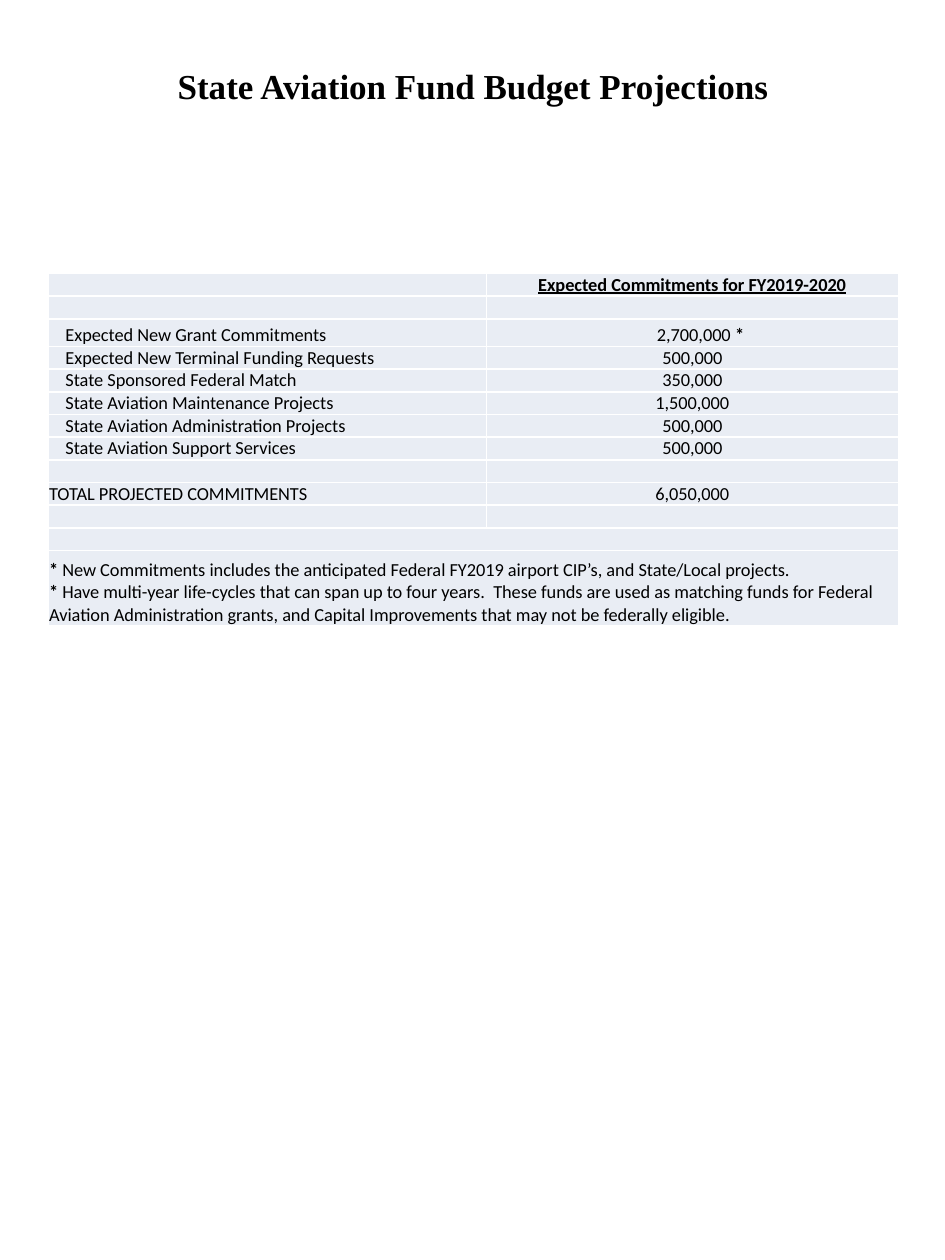
from dataclasses import dataclass

from lxml import etree
from pptx import Presentation
from pptx.dml.color import RGBColor
from pptx.enum import text
from pptx.oxml import ns
from pptx.util import Inches, Pt


@dataclass(frozen=True)
class Theme:
    ink: RGBColor = RGBColor(0x00, 0x00, 0x00)
    cell_fill: RGBColor = RGBColor(0xE9, 0xED, 0xF4)
    border: str = "FFFFFF"
    border_width: int = Pt(1)
    title_font: str = "Times New Roman"
    body_font: str = "Calibri"
    title_size: int = Pt(20)
    body_size: int = Pt(10.5)


THEME = Theme()
TITLE = "State Aviation Fund Budget Projections"
HEADING = "Expected Commitments for FY2019-2020"
COMMITMENTS = [
    ("Expected New Grant Commitments", "2,700,000 *"),
    ("Expected New Terminal Funding Requests", "500,000"),
    ("State Sponsored Federal Match", "350,000"),
    ("State Aviation Maintenance Projects", "1,500,000"),
    ("State Aviation Administration Projects", "500,000"),
    ("State Aviation Support Services", "500,000"),
]
TOTAL = ("TOTAL PROJECTED COMMITMENTS", "6,050,000")
NOTES = [
    "* New Commitments includes the anticipated Federal FY2019 airport CIP’s, "
    "and State/Local projects.",
    "* Have multi-year life-cycles that can span up to four years.  These funds "
    "are used as matching funds for Federal Aviation Administration grants, and "
    "Capital Improvements that may not be federally eligible.",
]
BLANK = ("", "")
ROWS = [("", HEADING), BLANK, *COMMITMENTS, BLANK, TOTAL, BLANK, BLANK,
        ("\n".join(NOTES), "")]
FIRST_ITEM = 2
ITEM_ROWS = range(FIRST_ITEM, FIRST_ITEM + len(COMMITMENTS))
MERGED_ROWS = (len(ROWS) - 2, len(ROWS) - 1)
ROW_HEIGHT = Inches(0.18)
TALL_ROWS = {FIRST_ITEM: Inches(0.22), len(ROWS) - 1: Inches(0.6)}
LABEL_WIDTH = Inches(3.48)
INDENT = Inches(0.13)


def style_font(font, name, size, bold=False):
    font.name, font.size, font.bold = name, size, bold
    font.color.rgb = THEME.ink


def add_title(slide, left, top, width, height):
    title = slide.shapes.title
    title.left, title.top, title.width, title.height = left, top, width, height
    frame = title.text_frame
    frame.text = TITLE
    frame.word_wrap = True
    frame.vertical_anchor = text.MSO_ANCHOR.MIDDLE
    frame.margin_bottom = Inches(0.36)  # raises the line above the box centre
    paragraph = frame.paragraphs[0]
    paragraph.alignment = text.PP_ALIGN.CENTER
    style_font(paragraph.runs[0].font, THEME.title_font, THEME.title_size, True)


def set_borders(cell):
    properties = cell._tc.get_or_add_tcPr()
    for index, side in enumerate(("lnL", "lnR", "lnT", "lnB")):
        line = etree.Element(ns.qn(f"a:{side}"), w=str(THEME.border_width))
        fill = etree.SubElement(line, ns.qn("a:solidFill"))
        etree.SubElement(fill, ns.qn("a:srgbClr"), val=THEME.border)
        properties.insert(index, line)


def write_paragraph(paragraph, content):
    """Write the content, with every asterisk in bold."""
    before, star, after = content.partition("*")
    for piece in filter(None, (before, star, after)):
        run = paragraph.add_run()
        run.text = piece
        style_font(run.font, THEME.body_font, THEME.body_size, piece == "*")
    # Keeps blank rows as low as the written ones
    end = paragraph._p.get_or_add_endParaRPr()
    end.set("sz", str(int(THEME.body_size.pt * 100)))


def fill_cell(cell, content, centred, indented):
    cell.fill.solid()
    cell.fill.fore_color.rgb = THEME.cell_fill
    set_borders(cell)
    cell.margin_left = cell.margin_right = Inches(0.01)
    cell.margin_top = cell.margin_bottom = 0
    cell.vertical_anchor = text.MSO_ANCHOR.BOTTOM
    frame = cell.text_frame
    for index, line in enumerate(content.split("\n")):
        paragraph = frame.add_paragraph() if index else frame.paragraphs[0]
        if centred:
            paragraph.alignment = text.PP_ALIGN.CENTER
        if indented:
            paragraph._p.get_or_add_pPr().set("marL", str(INDENT))
        write_paragraph(paragraph, line)


def add_budget_table(slide, left, top, width, height):
    frame = slide.shapes.add_table(len(ROWS), 2, left, top, width, height)
    table = frame.table
    table.first_row = table.horz_banding = False
    table.columns[0].width = LABEL_WIDTH
    table.columns[1].width = width - LABEL_WIDTH

    for row, contents in enumerate(ROWS):
        table.rows[row].height = TALL_ROWS.get(row, ROW_HEIGHT)
        for column, content in enumerate(contents):
            indented = (row in ITEM_ROWS and column == 0) or "0 *" in content
            fill_cell(table.cell(row, column), content, column == 1, indented)
        if row in MERGED_ROWS:
            table.cell(row, 0).merge(table.cell(row, 1))

    # Column heading
    heading = table.cell(0, 1).text_frame.paragraphs[0].runs[0].font
    heading.bold = heading.underline = True


def main():
    presentation = Presentation()
    presentation.slide_width = Inches(7.5)
    presentation.slide_height = Inches(10)
    slide = presentation.slides.add_slide(
        presentation.slide_layouts.get_by_name("Title Only"))
    left, width = Inches(0.38), Inches(6.75)
    add_title(slide, left, 0, width, Inches(1.67))
    add_budget_table(slide, left, Inches(2.17), width, Inches(2.8))
    presentation.save("out.pptx")


if __name__ == "__main__":
    main()
